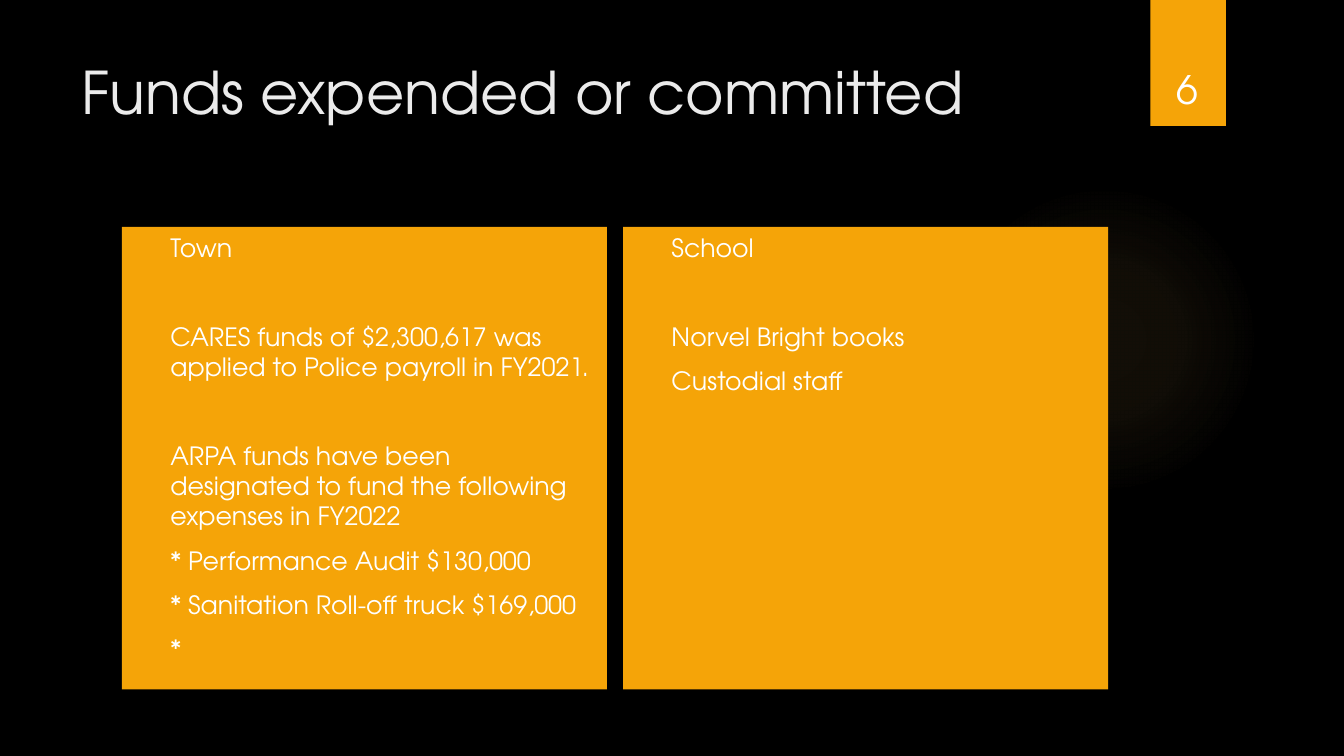
"""Build the slide on funds expended or committed by town and school."""
from lxml import etree
from pptx import Presentation
from pptx.dml.color import RGBColor
from pptx.enum.shapes import MSO_SHAPE
from pptx.enum.text import MSO_ANCHOR, MSO_AUTO_SIZE, PP_ALIGN
from pptx.oxml import parse_xml
from pptx.oxml.ns import qn
from pptx.util import Inches, Pt

OVAL, RECT = MSO_SHAPE.OVAL, MSO_SHAPE.RECTANGLE
TOP, BOTTOM = MSO_ANCHOR.TOP, MSO_ANCHOR.BOTTOM
LEFT, CENTER = PP_ALIGN.LEFT, PP_ALIGN.CENTER
FIXED = MSO_AUTO_SIZE.NONE

THEME = {
    "font": "TeX Gyre Adventor",
    "back": RGBColor.from_string("000000"),
    "gold": RGBColor.from_string("F5A408"),
    "white": RGBColor.from_string("FFFFFF"),
    "pale": RGBColor.from_string("EBEBEB"),
    "glow": "FAC96A",
    "title": Pt(42),
    "body": Pt(18),
    "number": Pt(28),
}
NEAR, FAR = Pt(10), Pt(42)
PANELS = [
    (1.21, [
        ("Town", 0),
        ("CARES funds of $2,300,617 was applied to Police payroll in FY2021.", FAR),
        ("ARPA funds have been designated to fund the following expenses in FY2022", FAR),
        ("* Performance Audit $130,000", NEAR),
        ("* Sanitation Roll-off truck $169,000", NEAR),
        ("*", NEAR),
    ]),
    (6.18, [
        ("School", 0),
        ("Norvel Bright books", FAR),
        ("Custodial staff", NEAR),
    ]),
]


def place(shape, left, top, width, height):
    """Set the frame of a shape in inches."""
    shape.left, shape.top = Inches(left), Inches(top)
    shape.width, shape.height = Inches(width), Inches(height)


def style(para, size, color, align):
    """Set the font and alignment of a paragraph."""
    para.alignment = align
    para.font.name = THEME["font"]
    para.font.size = THEME[size]
    para.font.color.rgb = THEME[color]


deck = Presentation()
deck.slide_width, deck.slide_height = Inches(13.33), Inches(7.5)
slide = deck.slides.add_slide(deck.slide_layouts[3])
slide.background.fill.solid()
slide.background.fill.fore_color.rgb = THEME["back"]
title, *bodies = slide.placeholders

glow = slide.shapes.add_shape(OVAL, Inches(9.41), Inches(1.83), Inches(3.08), Inches(3.08))
tab = slide.shapes.add_shape(RECT, Inches(11.41), 0, Inches(0.75), Inches(1.25))
for shape in (glow, tab):
    shape.shadow.inherit = False
    shape.line.fill.background()
    title.element.addprevious(shape.element)
tab.fill.solid()
tab.fill.fore_color.rgb = THEME["gold"]

stops = "".join(
    f'<a:gs pos="{pos * 1000}"><a:srgbClr val="{THEME["glow"]}">'
    f'<a:alpha val="{alpha * 1000}"/></a:srgbClr></a:gs>'
    for pos, alpha in ((0, 7), (36, 6), (69, 0))
)
shade = parse_xml(
    '<a:gradFill xmlns:a="http://schemas.openxmlformats.org/drawingml/2006/main">'
    f'<a:gsLst>{stops}</a:gsLst><a:path path="circle">'
    '<a:fillToRect l="50000" t="50000" r="50000" b="50000"/></a:path></a:gradFill>'
)
glow.fill.background()
blank = glow.element.spPr.find(qn("a:noFill"))
blank.getparent().replace(blank, shade)

place(title, 0.71, 0.5, 10.29, 1.53)
title.text_frame.text = "Funds expended or committed"
title.text_frame.auto_size = FIXED
title.text_frame.vertical_anchor = TOP
style(title.text_frame.paragraphs[0], "title", "pale", LEFT)

for body, (left, items) in zip(bodies, PANELS):
    place(body, left, 2.25, 4.81, 4.59)
    body.fill.solid()
    body.fill.fore_color.rgb = THEME["gold"]
    frame = body.text_frame
    frame.auto_size = FIXED
    frame.vertical_anchor = TOP
    frame.text = "\n".join(text for text, gap in items)
    for para, (text, gap) in zip(frame.paragraphs, items):
        props = para._p.get_or_add_pPr()
        props.set("marL", str(Inches(0.38)))
        props.set("indent", "0")
        etree.SubElement(props, qn("a:buNone"))
        para.space_before = gap
        style(para, "body", "white", LEFT)

number = slide.shapes.add_textbox(Inches(11.32), Inches(0.32), Inches(0.92), Inches(0.84))
number.text_frame.text = "6"
number.text_frame.word_wrap = True
number.text_frame.vertical_anchor = BOTTOM
style(number.text_frame.paragraphs[0], "number", "white", CENTER)

deck.save("out.pptx")
